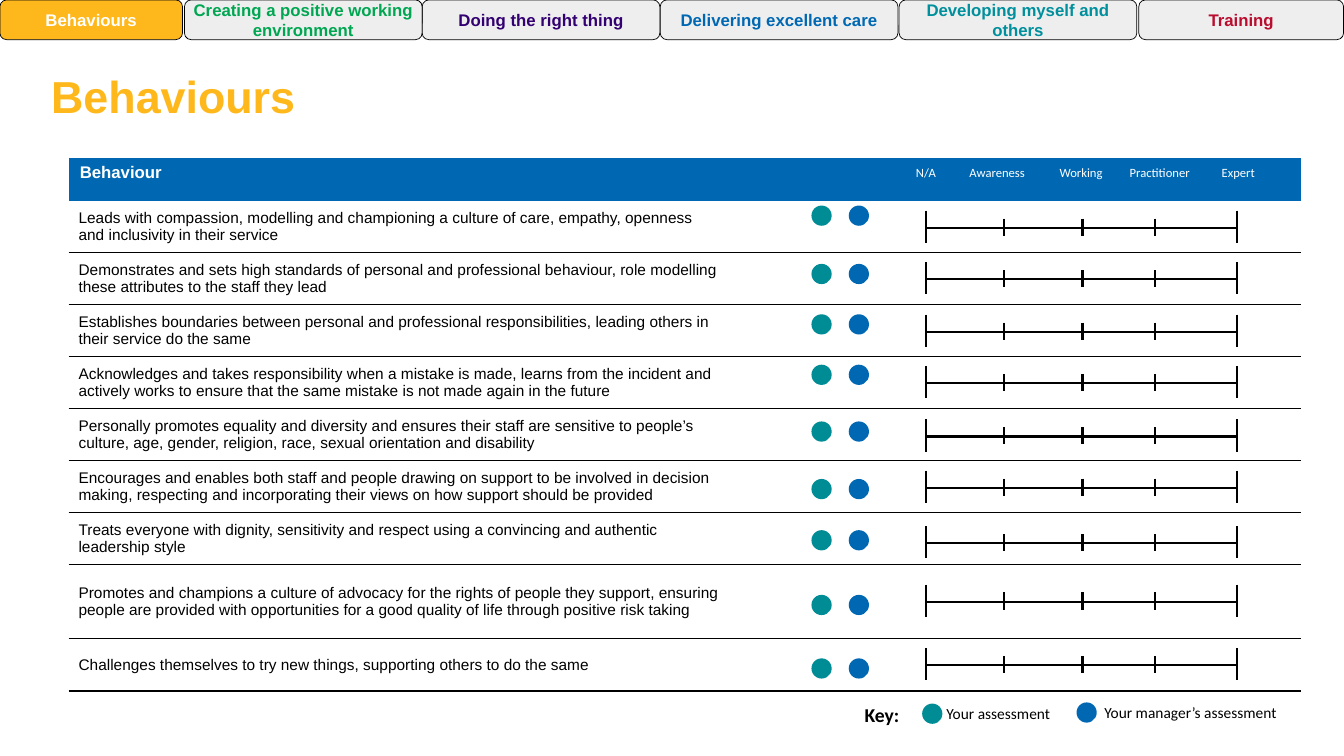
import pptx
import pptx.util
import pptx.dml.color
import pptx.enum.shapes
import pptx.enum.text
import pptx.oxml
import pptx.oxml.ns
from lxml import etree

Cm, Pt = pptx.util.Cm, pptx.util.Pt
ALIGN = pptx.enum.text.PP_ALIGN
ANCHOR = pptx.enum.text.MSO_ANCHOR
SHAPE = pptx.enum.shapes.MSO_SHAPE

COLOURS = {
    "amber": "FFB81C", "green": "00A651", "purple": "330072", "blue": "0068B3",
    "aqua": "008F9C", "red": "BA0C2F", "teal": "008C95", "grey": "CACACA",
    "black": "000000", "white": "FFFFFF",
}
TABS = [
    ("Behaviours", 0, 4.6, "amber", "white"),
    ("Creating a positive working environment", 4.65, 5.99, "grey", "green"),
    ("Doing the right thing", 10.64, 5.99, "grey", "purple"),
    ("Delivering excellent care", 16.64, 5.99, "grey", "blue"),
    ("Developing myself and others", 22.66, 5.99, "grey", "aqua"),
    ("Training", 28.7, 5.16, "grey", "red"),
]
BEHAVIOURS = [
    ("Leads with compassion, modelling and championing a culture of care, empathy, openness and inclusivity in their service", 1.31, 5.18, 5.74),
    ("Demonstrates and sets high standards of personal and professional behaviour, role modelling these attributes to the staff they lead", 1.31, 6.65, 7.04),
    ("Establishes boundaries between personal and professional responsibilities, leading others in their service do the same", 1.31, 7.92, 8.36),
    ("Acknowledges and takes responsibility when a mistake is made, learns from the incident and actively works to ensure that the same mistake is not made again in the future", 1.31, 9.19, 9.65),
    ("Personally promotes equality and diversity and ensures their staff are sensitive to people’s culture, age, gender, religion, race, sexual orientation and disability", 1.31, 10.62, 11.0),
    ("Encourages and enables both staff and people drawing on support to be involved in decision making, respecting and incorporating their views on how support should be provided", 1.31, 12.07, 12.29),
    ("Treats everyone with dignity, sensitivity and respect using a convincing and authentic leadership style", 1.31, 13.36, 13.69),
    ("Promotes and champions a culture of advocacy for the rights of people they support, ensuring people are provided with opportunities for a good quality of life through positive risk taking", 1.86, 14.99, 15.16),
    ("Challenges themselves to try new things, supporting others to do the same", 1.32, 16.59, 16.76),
]
LEVELS = [
    ("N/A", 22.23, ALIGN.CENTER), ("Awareness", 24.18, ALIGN.LEFT),
    ("Working", 26.14, ALIGN.CENTER), ("Practitioner", 28.12, ALIGN.CENTER),
    ("Expert", 30.1, ALIGN.CENTER),
]
KEY_LABELS = [
    ("Key:", 21.54, 17.58, 1.7, 0.86, 14, True),
    ("Your assessment", 23.6, 17.63, 8.46, 0.74, 11, False),
    ("Your manager’s assessment", 27.58, 17.6, 5.87, 0.74, 11, False),
]
KEY_DOTS = [(23.24, 17.73, "teal"), (27.13, 17.7, "blue")]
DOT_COLUMNS = [(20.45, "teal"), (21.39, "blue")]
TICKS = [23.34, 25.3, 27.28, 29.11, 31.17]
DOT_SIZE, HEADER_HEIGHT = 0.51, 1.07
TABLE_LEFT, TABLE_TOP, COLUMN_WIDTHS = 1.73, 3.99, (16.71, 14.35)
NO_GRID_STYLE = "{2D5ABB26-0587-4C30-8999-92F81FD0307C}"
CELL_MARGINS = {
    "margin_left": Cm(0.25), "margin_right": Cm(0.25),
    "margin_top": Cm(0.1), "margin_bottom": Cm(0.1),
    "vertical_anchor": ANCHOR.MIDDLE,
}
HEADER_MARGINS = {
    "margin_left": Cm(0.28), "margin_right": Cm(0.28),
    "margin_top": Cm(0.13), "margin_bottom": Cm(0.13),
    "vertical_anchor": ANCHOR.TOP,
}


def colour(name):
    return pptx.dml.color.RGBColor.from_string(COLOURS[name])


def apply(target, formats):
    for name, value in formats.items():
        setattr(target, name, value)


def paint(target, name):
    target.fill.solid()
    target.fill.fore_color.rgb = colour(name)


def write(frame, words, ink, size, font="Arial", bold=False, align=ALIGN.LEFT):
    para = frame.paragraphs[0]
    para.alignment = align
    span = para.add_run()
    span.text = words
    apply(span.font, {"name": font, "size": Pt(size), "bold": bold})
    span.font.color.rgb = colour(ink)


def add_label(page, words, left, top, width, height, ink, size, wrap=True, inset=None, **style):
    box = page.shapes.add_textbox(Cm(left), Cm(top), Cm(width), Cm(height))
    box.text_frame.word_wrap = wrap
    if inset:
        apply(box.text_frame, {"margin_" + side: Cm(inset) for side in ("left", "right", "top", "bottom")})
    write(box.text_frame, words, ink, size, **style)


def add_dot(page, left, top, name):
    dot = page.shapes.add_shape(SHAPE.OVAL, Cm(left), Cm(top), Cm(DOT_SIZE), Cm(DOT_SIZE))
    dot.shadow.inherit = False
    paint(dot, name)
    dot.line.fill.background()


def add_tab(page, words, left, width, fill, ink):
    tab = page.shapes.add_shape(SHAPE.ROUNDED_RECTANGLE, Cm(left), 0, Cm(width), Cm(1))
    tab.shadow.inherit = False
    paint(tab, fill)
    if fill == "grey":
        shade = tab._element.spPr.find(".//" + pptx.oxml.ns.qn("a:srgbClr"))
        etree.SubElement(shade, pptx.oxml.ns.qn("a:alpha"), val="30000")
    tab.line.color.rgb = colour("black")
    tab.line.width = Pt(0.5)
    apply(tab.text_frame, {"margin_left": 0, "margin_right": 0, "word_wrap": True,
                           "vertical_anchor": ANCHOR.MIDDLE})
    write(tab.text_frame, words, ink, 12, bold=True, align=ALIGN.CENTER)


def add_scale(page, middle):
    group = page.shapes.add_group_shape()
    strokes = [(TICKS[0], middle, TICKS[-1], middle)]
    for tick in TICKS:
        above, below = (0.43, 0.38) if tick in (TICKS[0], TICKS[-1]) else (0.23, 0.2)
        strokes.append((tick, middle - above, tick, middle + below))
    for stroke in strokes:
        line = group.shapes.add_connector(
            pptx.enum.shapes.MSO_CONNECTOR.STRAIGHT, *[Cm(value) for value in stroke])
        line.line.color.rgb = colour("black")
        line.line.width = Pt(1.5)
        etree.SubElement(line._element.spPr, pptx.oxml.ns.qn("a:effectLst"))


def underline(cell):
    border = pptx.oxml.parse_xml(
        f'<a:lnB {pptx.oxml.ns.nsdecls("a")} w="12700"><a:solidFill>'
        f'<a:srgbClr val="{COLOURS["black"]}"/></a:solidFill></a:lnB>')
    cell._tc.get_or_add_tcPr().insert(0, border)


def add_behaviour_table(page):
    heights = [HEADER_HEIGHT] + [entry[1] for entry in BEHAVIOURS]
    frame = page.shapes.add_table(
        len(heights), 2, Cm(TABLE_LEFT), Cm(TABLE_TOP), Cm(sum(COLUMN_WIDTHS)), Cm(sum(heights)))
    table = frame.table
    apply(table, {"first_row": False, "horz_banding": False})
    frame._element.find(".//" + pptx.oxml.ns.qn("a:tableStyleId")).text = NO_GRID_STYLE
    for column, width in zip(table.columns, COLUMN_WIDTHS):
        column.width = Cm(width)
    for index, height in enumerate(heights):
        table.rows[index].height = Cm(height)
        for cell in table.rows[index].cells:
            apply(cell, CELL_MARGINS if index else HEADER_MARGINS)
            if index:
                cell.fill.background()
                underline(cell)
            else:
                paint(cell, "blue")
    write(table.cell(0, 0).text_frame, "Behaviour", "white", 12, bold=True)
    for index, entry in enumerate(BEHAVIOURS, 1):
        write(table.cell(index, 0).text_frame, entry[0], "black", 11)


def main():
    deck = pptx.Presentation()
    apply(deck, {"slide_width": Cm(33.87), "slide_height": Cm(19.05)})
    page = deck.slides.add_slide(deck.slide_layouts[6])
    add_behaviour_table(page)
    for tab in TABS:
        add_tab(page, *tab)
    add_label(page, "Behaviours", 1.04, 1.47, 7.34, 1.75, "amber", 32,
              wrap=False, inset=0.25, bold=True)
    for words, left, align in LEVELS:
        add_label(page, words, left, 4.04, 2.21, 0.64, "white", 9, font="Calibri", align=align)
    for words, height, dot_top, middle in BEHAVIOURS:
        for left, name in DOT_COLUMNS:
            add_dot(page, left, dot_top, name)
        add_scale(page, middle)
    for dot in KEY_DOTS:
        add_dot(page, *dot)
    for words, left, top, width, height, size, bold in KEY_LABELS:
        add_label(page, words, left, top, width, height, "black", size, font="Calibri", bold=bold)
    deck.save("out.pptx")


if __name__ == "__main__":
    main()
